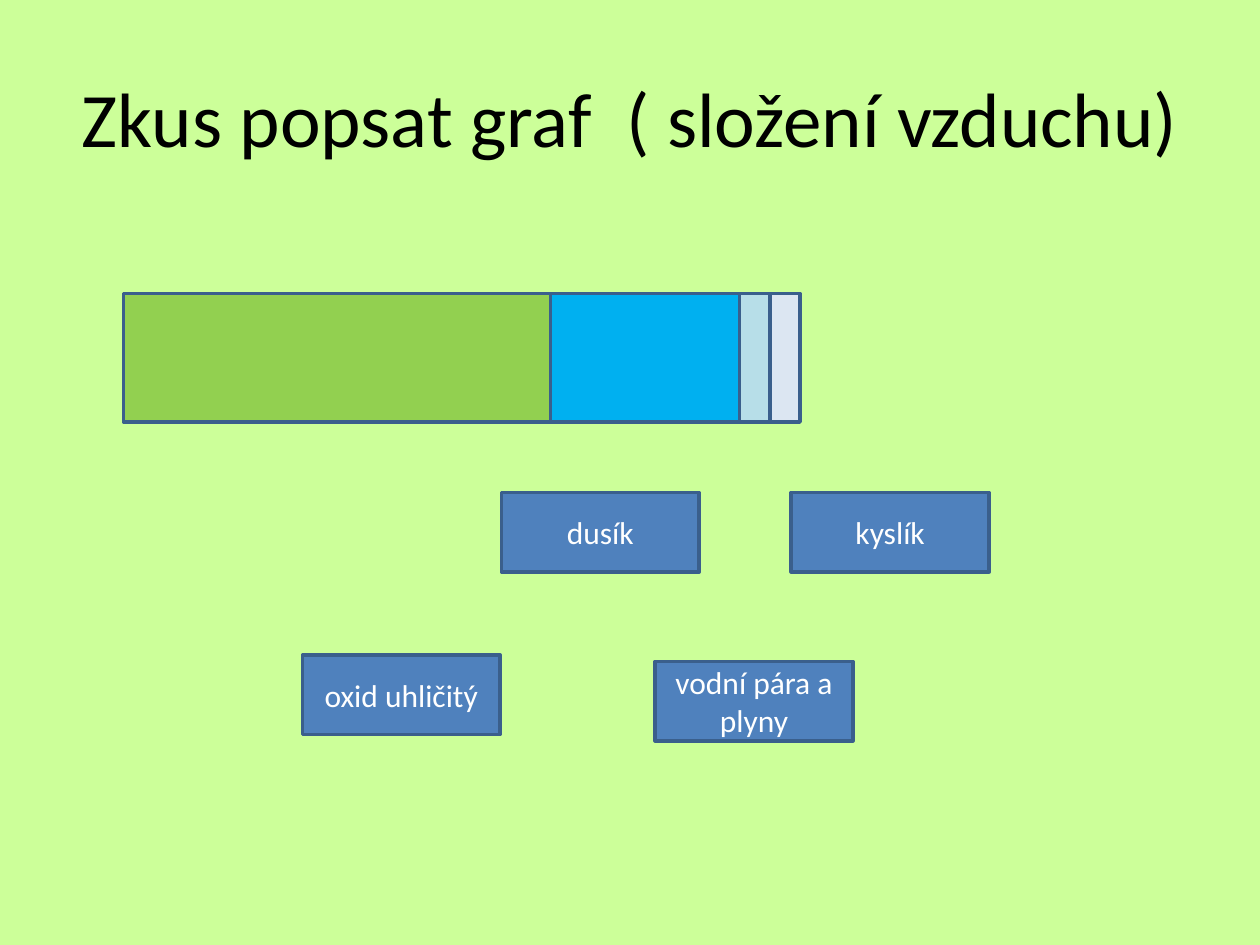
from dataclasses import dataclass

from pptx import Presentation
from pptx.dml.color import RGBColor
from pptx.enum import shapes, text
from pptx.util import Inches, Pt


@dataclass(frozen=True)
class Theme:
    font: str = "Calibri"
    title_size: int = 44
    label_size: int = 18
    line_width: int = 2
    background: str = "CCFF99"
    title: str = "000000"
    outline: str = "3A5F8C"
    label_fill: str = "4F81BD"
    label_text: str = "FFFFFF"
    nitrogen: str = "92D050"
    oxygen: str = "00B0F0"
    carbon_dioxide: str = "B7DEE8"
    other_gases: str = "DCE6F2"


theme = Theme()


def write(shape, words, size, color):
    frame = shape.text_frame
    frame.word_wrap = True
    frame.vertical_anchor = text.MSO_ANCHOR.MIDDLE
    para = frame.paragraphs[0]
    para.text = words
    para.alignment = text.PP_ALIGN.CENTER
    para.font.name = theme.font
    para.font.size = Pt(size)
    para.font.color.rgb = RGBColor.from_string(color)


def add_box(left, top, width, height, fill):
    box = page.shapes.add_shape(
        shapes.MSO_SHAPE.RECTANGLE,
        Inches(left), Inches(top), Inches(width), Inches(height))
    box.shadow.inherit = False
    box.fill.solid()
    box.fill.fore_color.rgb = RGBColor.from_string(fill)
    box.line.color.rgb = RGBColor.from_string(theme.outline)
    box.line.width = Pt(theme.line_width)
    return box


# Page and background
deck = Presentation()
deck.slide_width, deck.slide_height = Inches(10), Inches(7.5)
page = deck.slides.add_slide(deck.slide_layouts[5])
page.background.fill.solid()
page.background.fill.fore_color.rgb = RGBColor.from_string(theme.background)

# Title
title = page.shapes.title
title.left, title.top = Inches(0.5), Inches(0.3)
title.width, title.height = Inches(9), Inches(1.25)
write(title, "Zkus popsat graf  ( složení vzduchu)", theme.title_size, theme.title)

# Bar of air components, each segment starting where the last one ends
left = 0.98
for width, fill in [
    (3.39, theme.nitrogen),
    (1.5, theme.oxygen),
    (0.24, theme.carbon_dioxide),
    (0.24, theme.other_gases),
]:
    add_box(left, 2.33, width, 1.02, fill)
    left += width

# Labels to match with the segments
for words, left, top in [
    ("dusík", 3.98, 3.91),
    ("oxid uhličitý", 2.4, 5.2),
    ("vodní pára a plyny", 5.2, 5.25),
    ("kyslík", 6.28, 3.91),
]:
    label = add_box(left, top, 1.57, 0.63, theme.label_fill)
    write(label, words, theme.label_size, theme.label_text)

deck.save("out.pptx")
